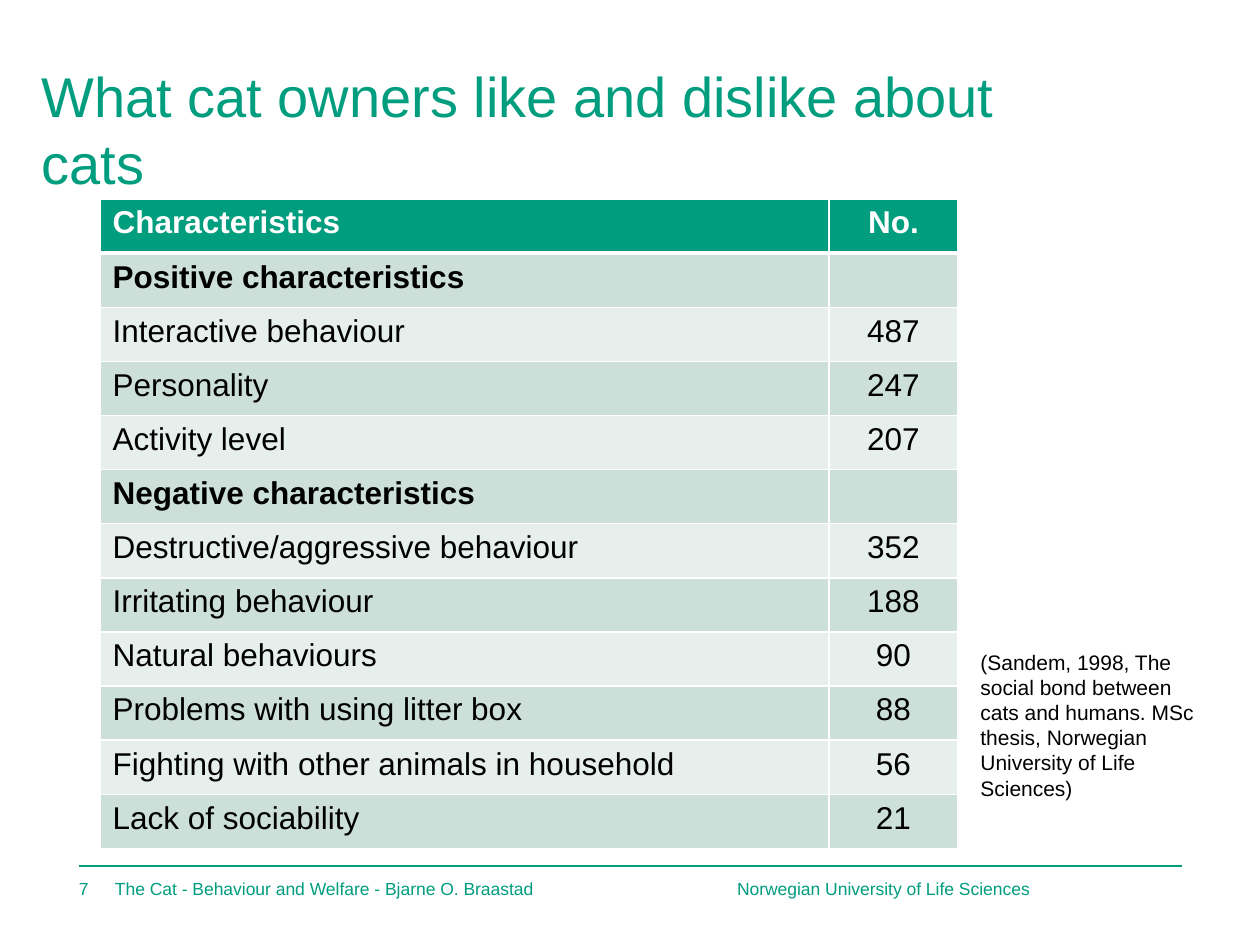
from lxml import etree
from pptx import Presentation
from pptx import util as u
from pptx.dml.color import RGBColor
from pptx.enum import shapes, text
from pptx.oxml.ns import qn

SCALE = 914400 / 126
GREEN, WHITE, BLACK = "009D7F", "FFFFFF", "000000"
BANDS = ["E7EFEC", "CCDFD8"]


def px(n):
    return u.Emu(round(n * SCALE))


def style(p, size, color, bold=False):
    p.font.name = "Arial"
    p.font.size = u.Pt(size)
    p.font.bold = bold
    p.font.color.rgb = RGBColor.from_string(color)


prs = Presentation()
prs.slide_width, prs.slide_height = px(1260), px(945)
s = prs.slides.add_slide(prs.slide_layouts[6])

rule = s.shapes.add_connector(shapes.MSO_CONNECTOR.STRAIGHT, px(79), px(866), px(1182), px(866))
rule.line.color.rgb = RGBColor.from_string(GREEN)
rule.line.width = u.Pt(1)
etree.SubElement(rule._element.spPr, qn("a:effectLst"))

texts = [
    ("What cat owners like and dislike about cats", 29, 55, 1062, 149, 32, GREEN),
    ("(Sandem, 1998, The social bond between cats and humans. MSc thesis, "
     "Norwegian University of Life Sciences)", 968, 643, 258, 165, 12, BLACK),
    ("7", 79, 878, 655, 21, 10, GREEN),
    ("The Cat - Behaviour and Welfare - Bjarne O. Braastad", 115, 878, 655, 21, 10, GREEN),
    ("Norwegian University of Life Sciences", 737, 878, 398, 21, 10, GREEN),
]
for words, x, y, w, h, size, color in texts:
    tf = s.shapes.add_textbox(px(x), px(y), px(w), px(h)).text_frame
    tf.word_wrap = True
    if size == 10:
        tf.margin_left = tf.margin_top = tf.margin_right = tf.margin_bottom = 0
        tf.vertical_anchor = text.MSO_ANCHOR.MIDDLE
    p = tf.paragraphs[0]
    p.text = words
    style(p, size, color)

rows = [
    ("Characteristics", "No."),
    ("Positive characteristics", ""),
    ("Interactive behaviour", "487"),
    ("Personality", "247"),
    ("Activity level", "207"),
    ("Negative characteristics", ""),
    ("Destructive/aggressive behaviour", "352"),
    ("Irritating behaviour", "188"),
    ("Natural behaviours", "90"),
    ("Problems with using litter box", "88"),
    ("Fighting with other animals in household", "56"),
    ("Lack of sociability", "21"),
]
table = s.shapes.add_table(len(rows), 2, px(100), px(199), px(858), px(650)).table
table.columns[0].width, table.columns[1].width = px(729), px(129)
for i, row in enumerate(rows):
    header = i == 0
    for j, words in enumerate(row):
        cell = table.cell(i, j)
        tcPr = cell._tc.get_or_add_tcPr()
        for side in ("lnL", "lnR", "lnT", "lnB"):
            thick = (header and side == "lnB") or (i == 1 and side == "lnT")
            ln = etree.SubElement(tcPr, qn("a:" + side), w=str(u.Pt(3 if thick else 1)))
            fill = etree.SubElement(ln, qn("a:solidFill"))
            etree.SubElement(fill, qn("a:srgbClr"), val=WHITE)
        cell.fill.solid()
        cell.fill.fore_color.rgb = RGBColor.from_string(GREEN if header else BANDS[i % 2])
        p = cell.text_frame.paragraphs[0]
        p.text = words
        if j == 1:
            p.alignment = text.PP_ALIGN.CENTER
        style(p, 18, WHITE if header else BLACK, header or not row[1])

prs.save("out.pptx")
